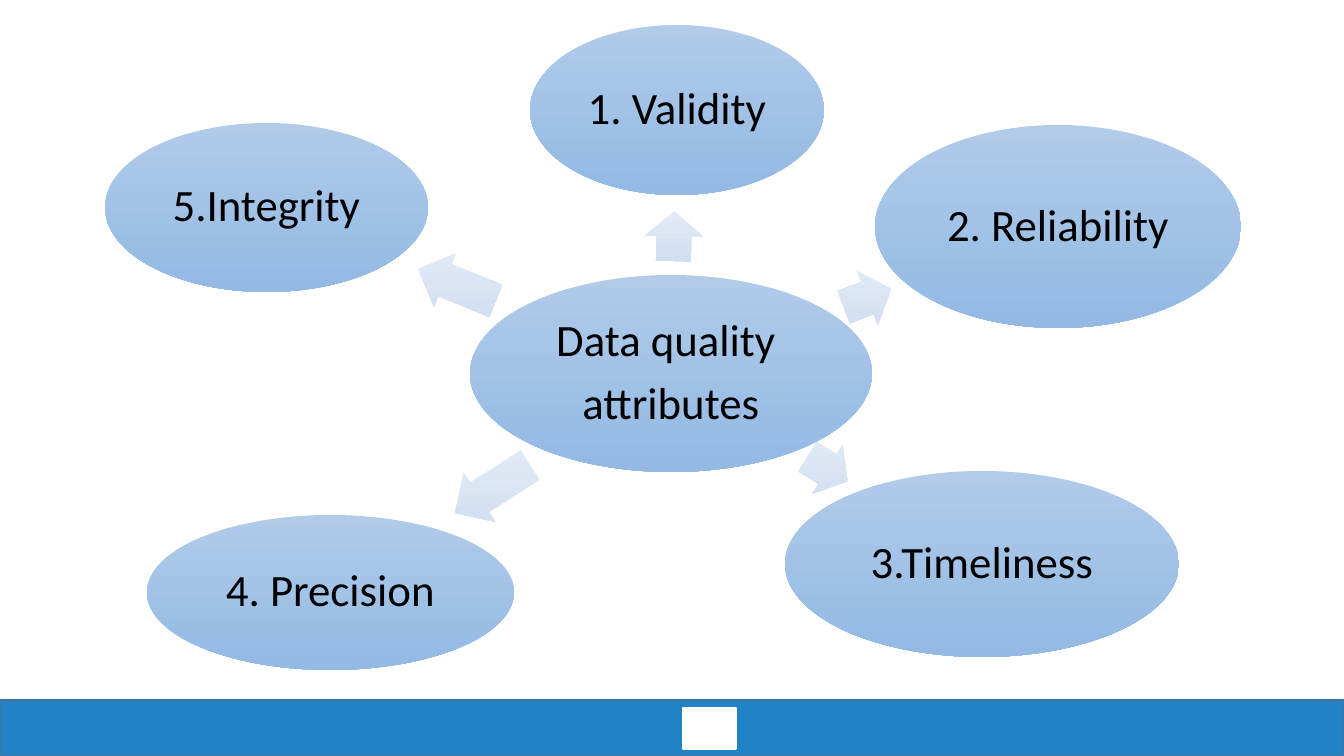
from pptx import Presentation
from pptx.dml.color import RGBColor
from pptx.enum.shapes import MSO_SHAPE
from pptx.enum.text import MSO_ANCHOR, PP_ALIGN
from pptx.oxml.ns import qn
from pptx.util import Emu, Pt

WHITE = RGBColor(0xFF, 0xFF, 0xFF)
BLACK = RGBColor(0x00, 0x00, 0x00)
FOOTER_BLUE = RGBColor(0x1F, 0x83, 0xC5)
FOOTER_EDGE = RGBColor(0x43, 0x73, 0x9E)
OVAL_COLORS = (RGBColor(0xB1, 0xCB, 0xE9), RGBColor(0x93, 0xB9, 0xE4))
ARROW_COLORS = (RGBColor(0xE3, 0xEB, 0xF6), RGBColor(0xD0, 0xDE, 0xF1))


def px(value):
    return Emu(round(value * 914400 / 100.8))


def add_gradient_shape(preset, box, colors):
    shape = slide.shapes.add_shape(preset, *map(px, box))
    shape.shadow.inherit = False
    shape.line.fill.background()
    shape.fill.gradient()
    shape.fill.gradient_angle = 270
    for stop, color in zip(shape.fill.gradient_stops, colors):
        stop.color.rgb = color
    shape._element.spPr.find(qn("a:gradFill")).set("rotWithShape", "0")
    return shape


presentation = Presentation()
presentation.slide_width = px(1344)
presentation.slide_height = px(756)
slide = presentation.slides.add_slide(presentation.slide_layouts[6])

footer_parts = [
    ((0, 700, 1344, 56), FOOTER_BLUE, FOOTER_EDGE),
    ((683, 708, 53, 41), WHITE, WHITE),
]
for box, fill_color, line_color in footer_parts:
    rectangle = slide.shapes.add_shape(MSO_SHAPE.RECTANGLE, *map(px, box))
    rectangle.shadow.inherit = False
    rectangle.fill.solid()
    rectangle.fill.fore_color.rgb = fill_color
    rectangle.line.color.rgb = line_color
    rectangle.line.width = Pt(1)

arrows = [
    ((649, 207, 50, 58), 271.3),
    ((842, 269, 51, 58), 339.1),
    ((804, 440, 47, 58), 31.5),
    ((448, 460, 89, 58), 147.3),
    ((415, 256, 84, 58), 202.3),
]
for box, rotation in arrows:
    arrow = add_gradient_shape(MSO_SHAPE.RIGHT_ARROW, box, ARROW_COLORS)
    arrow.adjustments[0] = 0.6
    arrow.adjustments[1] = 0.5
    arrow.rotation = rotation

ovals = [
    ("Data quality \nattributes", (470, 275, 402, 197)),
    ("1. Validity", (530, 25, 294, 170)),
    ("2. Reliability", (875, 125, 366, 203)),
    ("3.Timeliness", (785, 471, 394, 186)),
    ("4. Precision", (147, 515, 367, 155)),
    ("5.Integrity", (105, 123, 323, 169)),
]
for text, box in ovals:
    oval = add_gradient_shape(MSO_SHAPE.OVAL, box, OVAL_COLORS)
    text_frame = oval.text_frame
    text_frame.text = text
    text_frame.word_wrap = True
    text_frame.vertical_anchor = MSO_ANCHOR.MIDDLE
    text_frame.margin_left = text_frame.margin_right = px(4)
    text_frame.margin_top = text_frame.margin_bottom = px(4)
    for paragraph in text_frame.paragraphs:
        paragraph.alignment = PP_ALIGN.CENTER
        paragraph.line_spacing = 0.9
        paragraph.space_after = Pt(11)
        for run in paragraph.runs:
            run.font.name = "Calibri"
            run.font.size = Pt(32)
            run.font.color.rgb = BLACK

presentation.save("out.pptx")
